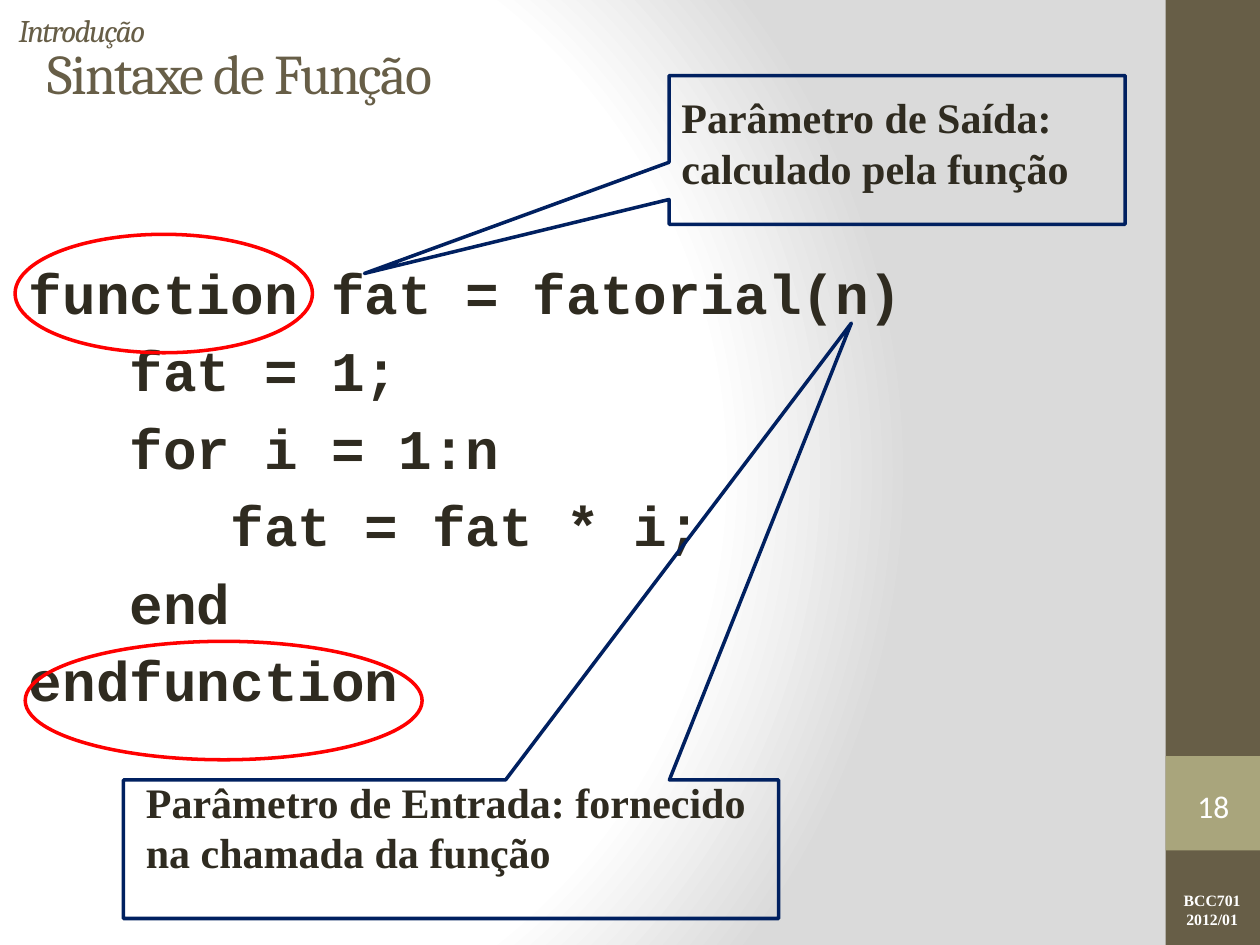
import pptx
import pptx.util
import pptx.dml.color
import pptx.enum.shapes
import pptx.enum.text
import pptx.oxml
import pptx.oxml.ns

Inches = pptx.util.Inches
Pt = pptx.util.Pt
Kind = pptx.enum.shapes.MSO_SHAPE
Align = pptx.enum.text.PP_ALIGN
Anchor = pptx.enum.text.MSO_ANCHOR

COLORS = {
    "bar": "675E47",
    "tab": "A9A57C",
    "ink": "2F2B20",
    "navy": "002060",
    "red": "FF0000",
    "white": "FFFFFF",
    "gray": "DADADA",
}

CODE = [
    "function fat = fatorial(n)",
    "   fat = 1;",
    "   for i = 1:n",
    "      fat = fat * i;",
    "   end",
    "endfunction",
]


def color(name):
    return pptx.dml.color.RGBColor.from_string(COLORS[name])


def add_shape(slide, kind, box, fill=None, line=None, adjust=()):
    shape = slide.shapes.add_shape(kind, *map(Inches, box))
    shape.shadow.inherit = False
    for i, value in enumerate(adjust):
        shape.adjustments[i] = value
    if fill:
        shape.fill.solid()
        shape.fill.fore_color.rgb = color(fill)
    else:
        shape.fill.background()
    if line:
        shape.line.color.rgb = color(line)
        shape.line.width = Pt(2)
    else:
        shape.line.fill.background()
    return shape


def add_text(slide, box, lines, face, size, ink, bold=False, italic=False,
             align=Align.LEFT, anchor=Anchor.TOP, before=0, track=0, inset=0.1):
    frame = slide.shapes.add_textbox(*map(Inches, box)).text_frame
    frame.word_wrap = True
    frame.vertical_anchor = anchor
    frame.margin_left = frame.margin_right = Inches(inset)
    for i, line in enumerate(lines):
        para = frame.add_paragraph() if i else frame.paragraphs[0]
        para.alignment = align
        if i and before:
            para.space_before = Pt(before)
        run = para.add_run()
        run.text = line
        font = run.font
        font.name, font.size = face, Pt(size)
        font.bold, font.italic = bold, italic
        font.color.rgb = color(ink)
        if track:
            font._element.set("spc", str(track * 100))


def add_back(slide):
    slide.background.fill.solid()
    props = slide.element.find(".//" + pptx.oxml.ns.qn("p:bgPr"))
    stops = "".join(
        f'<a:gs pos="{pos * 1000}"><a:srgbClr val="{COLORS[name]}"/></a:gs>'
        for pos, name in [(0, "white"), (75, "white"), (100, "gray")]
    )
    grad = pptx.oxml.parse_xml(
        f'<a:gradFill {pptx.oxml.ns.nsdecls("a")} rotWithShape="1">'
        f'<a:gsLst>{stops}</a:gsLst><a:path path="circle">'
        '<a:fillToRect l="20000" t="50000" r="100000" b="50000"/>'
        '</a:path></a:gradFill>'
    )
    props.replace(props[0], grad)


def add_side(slide, box):
    left, top, width, height = box
    add_shape(slide, Kind.RECTANGLE, box, fill="bar")
    tab = (left, top + 6, width, width)
    add_shape(slide, Kind.RECTANGLE, tab, fill="tab")
    add_text(slide, (left + 0.01, top + 7.02, 0.72, 0.4), ["BCC701", "2012/01"],
             "Times New Roman", 9, "white", bold=True, align=Align.CENTER)
    add_text(slide, (left + 0.08, top + 6.18, 0.6, 0.43), ["18"], "Calibri", 18,
             "white", align=Align.CENTER, anchor=Anchor.MIDDLE, inset=0)


def add_head(slide, box):
    left, top, width, height = box
    add_text(slide, (left + 0.23, top + 0.23, width - 0.23, 0.54),
             ["Sintaxe de Função"], "Cambria", 32, "bar",
             anchor=Anchor.MIDDLE, track=-1)
    add_text(slide, (left, top, 8.32, 0.34), ["Introdução"], "Cambria", 18,
             "bar", italic=True, anchor=Anchor.MIDDLE, track=-1)


def add_code(slide, box):
    left, top, width, height = box
    add_text(slide, box, CODE, "Courier New", 32, "ink", bold=True,
             before=5.9, inset=0.23)
    for x, y, wide in [(0.12, -0.14, 2.36), (0.2, 3.09, 3.15)]:
        add_shape(slide, Kind.OVAL, (left + x, top + y, wide, 0.94), line="red")


def add_note(slide, box, tip, label, place):
    add_shape(slide, Kind.RECTANGULAR_CALLOUT, box, line="navy", adjust=tip)
    left, top, width, height = box
    x, y, wide = place
    add_text(slide, (left + x, top + y, wide, 0.91), [label],
             "Times New Roman", 24, "ink", bold=True)


def main():
    deck = pptx.Presentation()
    deck.slide_width, deck.slide_height = Inches(10), Inches(7.5)
    slide = deck.slides.add_slide(deck.slide_layouts[6])
    add_back(slide)
    add_side(slide, (9.25, 0, 0.75, 7.5))
    add_head(slide, (0.05, 0.07, 9.17, 0.77))
    add_code(slide, (0, 2, 9.17, 4))
    add_note(slide, (5.31, 0.6, 3.62, 1.18), (-1.168, 0.831),
             "Parâmetro de Saída: calculado pela função", (0, 0.08, 3.54))
    add_note(slide, (0.98, 6.19, 5.2, 1.1), (0.611, -3.796),
             "Parâmetro de Entrada: fornecido na chamada da função",
             (0.08, -0.08, 5.04))
    deck.save("out.pptx")


if __name__ == "__main__":
    main()
